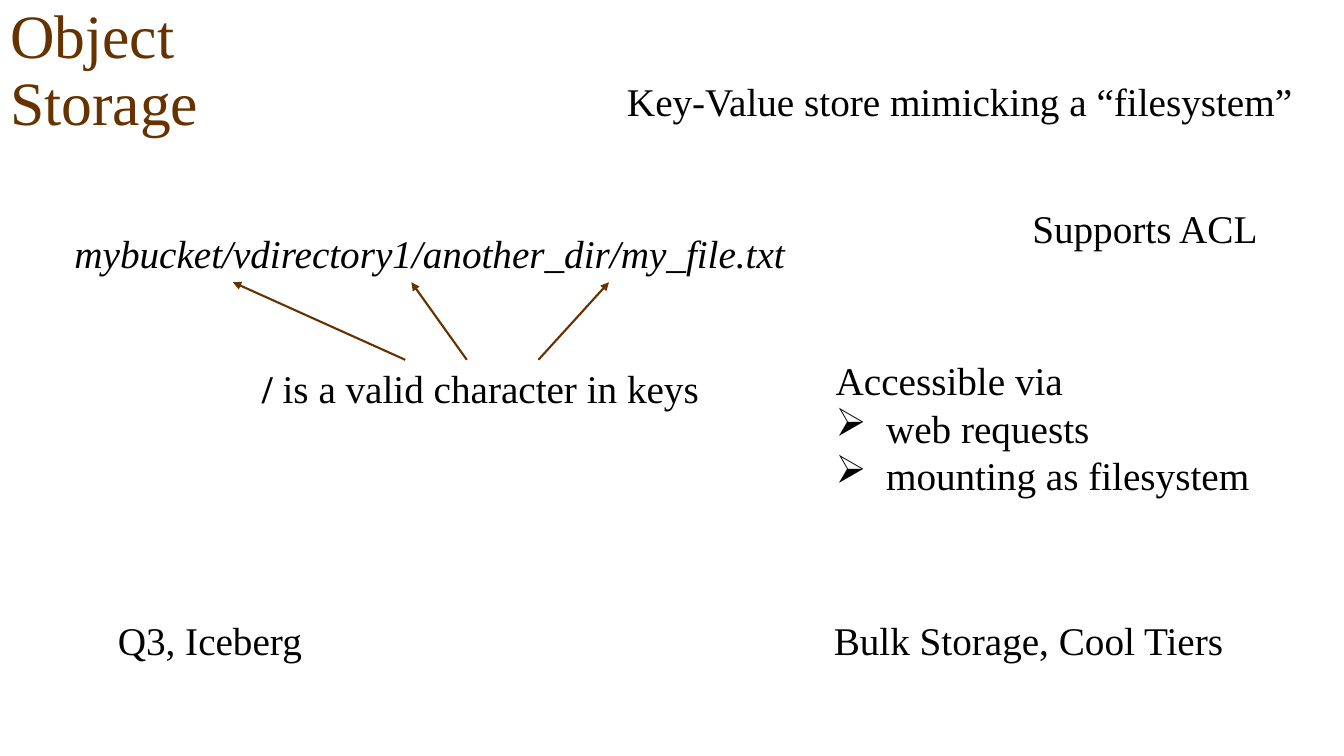
"""Build the slide on object storage."""
import pptx
import pptx.dml.color
import pptx.enum.shapes
import pptx.enum.text
import pptx.oxml.ns
import pptx.util
from lxml import etree

Inches = pptx.util.Inches
Pt = pptx.util.Pt
ALIGN = pptx.enum.text.PP_ALIGN
qn = pptx.oxml.ns.qn

BROWN = pptx.dml.color.RGBColor(0x66, 0x33, 0x00)
BLACK = pptx.dml.color.RGBColor(0, 0, 0)
FACE = "Times New Roman"

NOTES = [
    ("Q3, Iceberg", 1.07, 6.07, 5.27, ALIGN.LEFT, False),
    ("Bulk Storage, Cool Tiers", 7.06, 6.07, 5.17, ALIGN.RIGHT, False),
    ("Key-Value store mimicking a “filesystem”", 6.12, 0.72, 6.95, ALIGN.LEFT, False),
    ("mybucket/vdirectory1/another_dir/my_file.txt", 0.64, 2.23, 7.67, ALIGN.LEFT, True),
    ("Supports ACL", 10.14, 1.98, 2.69, ALIGN.LEFT, False),
]
ARROWS = [(4.02, 2.31), (4.63, 4.08), (5.34, 6.04)]


def style(para, size=28, color=BLACK, align=ALIGN.LEFT):
    para.font.name = FACE
    para.font.size = Pt(size)
    para.font.color.rgb = color
    para.alignment = align


def add_title(slide, text):
    title = slide.shapes.title
    title.left, title.top = Inches(0), Inches(0)
    title.width, title.height = Inches(3.62), Inches(1.43)
    frame = title.text_frame
    frame.text = text
    frame.word_wrap = True
    frame.auto_size = pptx.enum.text.MSO_AUTO_SIZE.NONE
    frame.vertical_anchor = pptx.enum.text.MSO_ANCHOR.MIDDLE
    para = frame.paragraphs[0]
    style(para, 44, BROWN)
    para.line_spacing = 0.9


def add_box(slide, left, top, width, height=0.57):
    box = slide.shapes.add_textbox(
        Inches(left), Inches(top), Inches(width), Inches(height))
    frame = box.text_frame
    frame.word_wrap = True
    frame.auto_size = pptx.enum.text.MSO_AUTO_SIZE.SHAPE_TO_FIT_TEXT
    return frame


def add_note(slide, text, left, top, width, align, slanted):
    para = add_box(slide, left, top, width).paragraphs[0]
    para.text = text
    style(para, align=align)
    para.font.italic = slanted


def add_key_rule(slide):
    para = add_box(slide, 2.5, 3.57, 4.86).paragraphs[0]
    style(para)
    slash = para.add_run()
    slash.text = "/"
    slash.font.bold = True
    para.add_run().text = " is a valid character in keys"


def add_list(slide, head, items):
    frame = add_box(slide, 8.19, 3.49, 4.37, 1.51)
    frame.text = head
    style(frame.paragraphs[0])
    for item in items:
        para = frame.add_paragraph()
        para.text = item
        style(para)
        props = para._p.get_or_add_pPr()
        props.set("marL", str(Inches(0.5)))
        props.set("indent", str(Inches(-0.5)))
        mark = etree.Element(qn("a:buChar"), char="➢")
        props.insert_element_before(mark, "a:tabLst", "a:defRPr", "a:extLst")


def add_arrow(slide, start, end):
    arrow = slide.shapes.add_connector(
        pptx.enum.shapes.MSO_CONNECTOR.STRAIGHT,
        Inches(start), Inches(3.57), Inches(end), Inches(2.8))
    arrow.line.color.rgb = BROWN
    arrow.line.width = Pt(1.5)
    props = arrow._element.spPr
    etree.SubElement(props.find(qn("a:ln")), qn("a:tailEnd"), type="triangle")
    etree.SubElement(props, qn("a:effectLst"))


def main():
    deck = pptx.Presentation()
    deck.slide_width, deck.slide_height = Inches(13.33), Inches(7.5)
    slide = deck.slides.add_slide(deck.slide_layouts[5])
    add_title(slide, "Object Storage")
    for note in NOTES:
        add_note(slide, *note)
    add_key_rule(slide)
    add_list(slide, "Accessible via", ["web requests", "mounting as filesystem"])
    for start, end in ARROWS:
        add_arrow(slide, start, end)
    deck.save("out.pptx")


if __name__ == "__main__":
    main()
